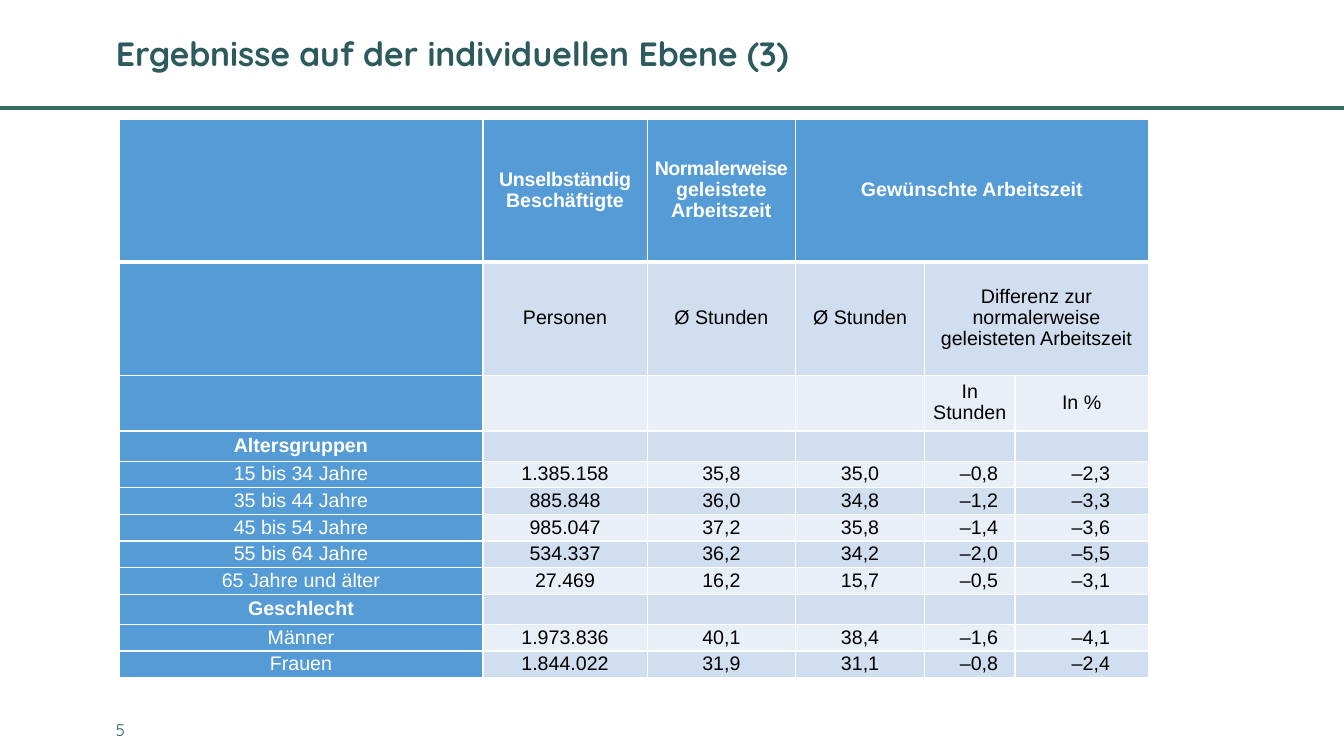
from lxml import etree
from pptx import Presentation
from pptx.dml.color import RGBColor
from pptx.enum.shapes import MSO_CONNECTOR
from pptx.enum.text import MSO_ANCHOR, PP_ALIGN
from pptx.oxml.ns import qn
from pptx.util import Cm, Pt

LEFT, CENTER = PP_ALIGN.LEFT, PP_ALIGN.CENTER
MIDDLE = MSO_ANCHOR.MIDDLE
STRAIGHT = MSO_CONNECTOR.STRAIGHT

TITLE = "Ergebnisse auf der individuellen Ebene (3)"
PAGE = "5"
HEADER = [
    ["", "Unselbständig Beschäftigte", "Normalerweise geleistete Arbeitszeit",
     "Gewünschte Arbeitszeit", "", ""],
    ["", "Personen", "Ø Stunden", "Ø Stunden",
     "Differenz zur normalerweise geleisteten Arbeitszeit", ""],
    ["", "", "", "", "In Stunden", "In %"],
]
GROUPS = {
    "Altersgruppen": [
        ("15 bis 34 Jahre", "1.385.158", "35,8", "35,0", "0,8", "2,3"),
        ("35 bis 44 Jahre", "885.848", "36,0", "34,8", "1,2", "3,3"),
        ("45 bis 54 Jahre", "985.047", "37,2", "35,8", "1,4", "3,6"),
        ("55 bis 64 Jahre", "534.337", "36,2", "34,2", "2,0", "5,5"),
        ("65 Jahre und älter", "27.469", "16,2", "15,7", "0,5", "3,1"),
    ],
    "Geschlecht": [
        ("Männer", "1.973.836", "40,1", "38,4", "1,6", "4,1"),
        ("Frauen", "1.844.022", "31,9", "31,1", "0,8", "2,4"),
    ],
}
MERGES = {(0, 3): (0, 5), (1, 4): (1, 5)}
TIGHT_WORDS = {"Unselbständig": -20, "Normalerweise": -40}  # hundredths of a point

COLORS = {
    "title": "2C5A5D", "rule": "386C61", "head": "559BD5", "band_dark": "D1DEEF",
    "band_light": "E9EFF7", "white": "FFFFFF", "black": "000000",
}
COL_WIDTHS = [9.17, 4.14, 3.74, 3.25, 2.28, 3.36]
HEADER_HEIGHTS = [3.6, 2.86, 1.4]
GROUP_HEIGHT, DATA_HEIGHT = 0.74, 0.67
MARGIN = 2.92
TABLE_LEFT, TABLE_TOP = 3, 3
RULE_Y = 2.72
PERSON_TABS = [(1.5, "dec")]
DIFFERENCE_TABS = [(0.6, "ctr"), (0.9, "dec")]


def rgb(name):
    return RGBColor.from_string(COLORS[name])


def style(font, face, size, color, bold=False):
    font.name, font.size, font.bold = face, Pt(size), bold
    font.color.rgb = rgb(color)


def set_insets(tf, left, top, right, bottom):
    tf.margin_left, tf.margin_top = Cm(left), Cm(top)
    tf.margin_right, tf.margin_bottom = Cm(right), Cm(bottom)


def add_tabs(p, tabs):
    tab_list = etree.SubElement(p._p.get_or_add_pPr(), qn("a:tabLst"))
    for pos, align in tabs:
        etree.SubElement(tab_list, qn("a:tab"), pos=str(Cm(pos)), algn=align)


def set_borders(cell, top, bottom):
    """White borders; top and bottom widths in points."""
    tc_pr = cell._tc.get_or_add_tcPr()
    for i, (side, width) in enumerate(zip("LRTB", (1, 1, top, bottom))):
        ln = etree.Element(qn(f"a:ln{side}"), w=str(Pt(width)))
        fill = etree.SubElement(ln, qn("a:solidFill"))
        etree.SubElement(fill, qn("a:srgbClr"), val=COLORS["white"])
        tc_pr.insert(i, ln)


def write_cell(cell, text, color, bold, tabs):
    p = cell.text_frame.paragraphs[0]
    p.alignment, p.line_spacing, p.space_after = CENTER, Pt(15), Pt(1)
    if tabs:
        add_tabs(p, tabs)
    first, space, rest = text.partition(" ")
    parts = [first, space + rest] if first in TIGHT_WORDS else [text]
    for part in filter(None, parts):
        r = p.add_run()
        r.text = part
        style(r.font, "Arial", 14, color, bold)
        if part in TIGHT_WORDS:
            r.font._element.set("spc", str(TIGHT_WORDS[part]))


def build_rows():
    """Return (texts, height, is_bold, is_data) for each table row."""
    rows = [(texts, height, i == 0, False)
            for i, (texts, height) in enumerate(zip(HEADER, HEADER_HEIGHTS))]
    for group, records in GROUPS.items():
        rows.append(([group] + [""] * 5, GROUP_HEIGHT, True, False))
        for *values, hours, percent in records:
            texts = values + [f"\t–\t{hours}", f"\t–\t{percent}"]
            rows.append((texts, DATA_HEIGHT, False, True))
    return rows


def add_results_table(s):
    rows = build_rows()
    table = s.shapes.add_table(
        len(rows), len(COL_WIDTHS), Cm(TABLE_LEFT), Cm(TABLE_TOP),
        Cm(sum(COL_WIDTHS)), Cm(sum(row[1] for row in rows))).table
    for column, width in zip(table.columns, COL_WIDTHS):
        column.width = Cm(width)
    for i, (texts, height, bold, is_data) in enumerate(rows):
        table.rows[i].height = Cm(height)
        for j, text in enumerate(texts):
            cell = table.cell(i, j)
            is_head = i == 0 or j == 0
            band = "band_dark" if i % 2 else "band_light"
            cell.fill.solid()
            cell.fill.fore_color.rgb = rgb("head" if is_head else band)
            cell.vertical_anchor = MIDDLE
            set_insets(cell, 0.12, 0, 0.12, 0)
            set_borders(cell, 3 if i == 1 else 1, 3 if i == 0 else 1)
            tabs = {1: PERSON_TABS, 4: DIFFERENCE_TABS, 5: DIFFERENCE_TABS}.get(j)
            write_cell(cell, text, "white" if is_head else "black", bold,
                       tabs if is_data else None)
    for start, end in MERGES.items():
        merged = table.cell(*start)
        merged.merge(table.cell(*end))
        set_insets(merged, 0.25, 0.13, 0.25, 0.13)


def add_title(s):
    sp = s.shapes.title
    sp.left, sp.top, sp.width, sp.height = Cm(MARGIN), Cm(0.2), Cm(28), Cm(2.29)
    sp.fill.solid()
    sp.fill.fore_color.rgb = rgb("white")
    tf = sp.text_frame
    tf.text = TITLE
    tf.vertical_anchor = MIDDLE
    set_insets(tf, 0, 0, 0, 0)
    p = tf.paragraphs[0]
    p.alignment = LEFT
    style(p.runs[0].font, "Quicksand", 24, "title", True)


def add_rule(s, width):
    rule = s.shapes.add_connector(STRAIGHT, 0, Cm(RULE_Y), width, Cm(RULE_Y))
    rule.line.color.rgb = rgb("rule")
    rule.line.width = Pt(2.25)
    etree.SubElement(rule._element.spPr, qn("a:effectLst"))


def add_page_number(s):
    tf = s.shapes.add_textbox(Cm(MARGIN), Cm(18.08), Cm(7.87), Cm(0.61)).text_frame
    tf.word_wrap = True
    tf.vertical_anchor = MIDDLE
    set_insets(tf, 0, 0.13, 0.25, 0.13)
    tf.text = PAGE
    style(tf.paragraphs[0].runs[0].font, "Quicksand", 12, "title")


def main():
    prs = Presentation()
    prs.slide_width, prs.slide_height = Cm(33.87), Cm(19.05)
    s = prs.slides.add_slide(prs.slide_layouts[5])
    add_title(s)
    add_rule(s, prs.slide_width)
    add_page_number(s)
    add_results_table(s)
    prs.save("out.pptx")


if __name__ == "__main__":
    main()
